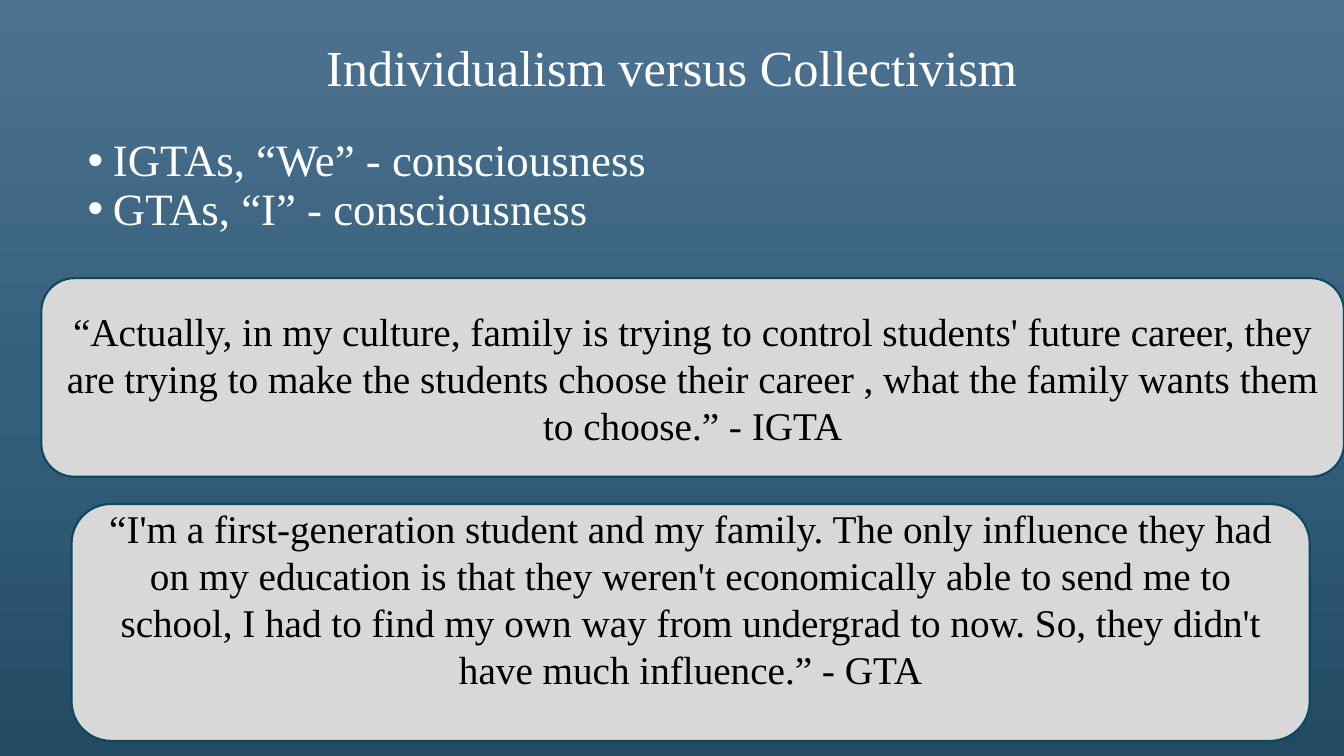
from copy import deepcopy

from lxml.etree import SubElement
from pptx import Presentation
from pptx.dml.color import RGBColor
from pptx.enum.shapes import MSO_SHAPE
from pptx.enum.text import MSO_ANCHOR, MSO_AUTO_SIZE, PP_ALIGN
from pptx.oxml.ns import qn
from pptx.util import Inches, Pt

FONT = "Times New Roman"
WHITE = "FFFFFF"
BACKGROUND_STOPS = [(0, "4D728F"), (0.5, "35607D"), (1, "234A63")]
IGTA_QUOTE = (
    "“Actually, in my culture, family is trying to control students' future career, "
    "they are trying to make the students choose their career , what the family "
    "wants them to choose.” - IGTA"
)
GTA_QUOTE = (
    "“I'm a first-generation student and my family. The only influence they had on "
    "my education is that they weren't economically able to send me to school, I had "
    "to find my own way from undergrad to now. So, they didn't have much influence.” - GTA"
)


def color(value):
    return RGBColor.from_string(value)


def paint_background(page):
    fill = page.background.fill
    fill.gradient()
    fill.gradient_angle = 270
    stop_list = page.element.find(".//" + qn("a:gsLst"))
    stop_list.insert(1, deepcopy(stop_list[0]))
    for stop, (position, value) in zip(fill.gradient_stops, BACKGROUND_STOPS):
        stop.position = position
        stop.color.rgb = color(value)


def place(shape, left, top, width, height):
    shape.left, shape.top = Inches(left), Inches(top)
    shape.width, shape.height = Inches(width), Inches(height)


def write(frame, lines, size, ink=WHITE, align=PP_ALIGN.CENTER,
          anchor=MSO_ANCHOR.TOP, spacing=1.0, bottom=0.05):
    frame.word_wrap = True
    frame.auto_size = MSO_AUTO_SIZE.NONE
    frame.vertical_anchor = anchor
    frame.margin_left = frame.margin_right = Inches(0.1)
    frame.margin_top, frame.margin_bottom = Inches(0.05), Inches(bottom)
    for index, line in enumerate(lines):
        para = frame.add_paragraph() if index else frame.paragraphs[0]
        para.alignment = align
        para.line_spacing = spacing
        para.space_before = para.space_after = Pt(0)
        span = para.add_run()
        span.text = line
        span.font.name = FONT
        span.font.size = Pt(size)
        span.font.color.rgb = color(ink)


def add_bullets(frame):
    for para in frame.paragraphs:
        properties = para._p.get_or_add_pPr()
        properties.set("marL", str(Inches(0.25)))
        properties.set("indent", str(-Inches(0.25)))
        bullet_color = SubElement(properties, qn("a:buClr"))
        SubElement(bullet_color, qn("a:srgbClr"), val=WHITE)
        SubElement(properties, qn("a:buFont"), typeface="Arial")
        SubElement(properties, qn("a:buChar"), char="•")


def add_quote(page, text, left, top, width, height, bottom=0.05):
    box = page.shapes.add_shape(
        MSO_SHAPE.ROUNDED_RECTANGLE,
        Inches(left), Inches(top), Inches(width), Inches(height))
    box.shadow.inherit = False
    box.fill.solid()
    box.fill.fore_color.rgb = color("D8D8D8")
    box.line.color.rgb = color("0B4960")
    box.line.width = Pt(1.5)
    write(box.text_frame, [text], 28, ink="000000",
          anchor=MSO_ANCHOR.MIDDLE, bottom=bottom)


def main():
    deck = Presentation()
    deck.slide_width, deck.slide_height = Inches(13.33), Inches(7.5)
    page = deck.slides.add_slide(deck.slide_layouts[1])
    paint_background(page)

    title, body = page.placeholders
    place(title, 0.34, 0.31, 12.65, 1.31)
    write(title.text_frame, ["Individualism versus Collectivism"], 36)
    place(body, 0.77, 1.32, 11.34, 1.56)
    write(body.text_frame,
          ["IGTAs, “We” - consciousness", "GTAs, “I” - consciousness"],
          32, align=PP_ALIGN.LEFT, spacing=0.9)
    add_bullets(body.text_frame)

    add_quote(page, IGTA_QUOTE, 0.41, 2.76, 12.92, 1.97)
    add_quote(page, GTA_QUOTE, 0.71, 5, 12.28, 2.35, bottom=0.52)
    deck.save("out.pptx")


if __name__ == "__main__":
    main()
